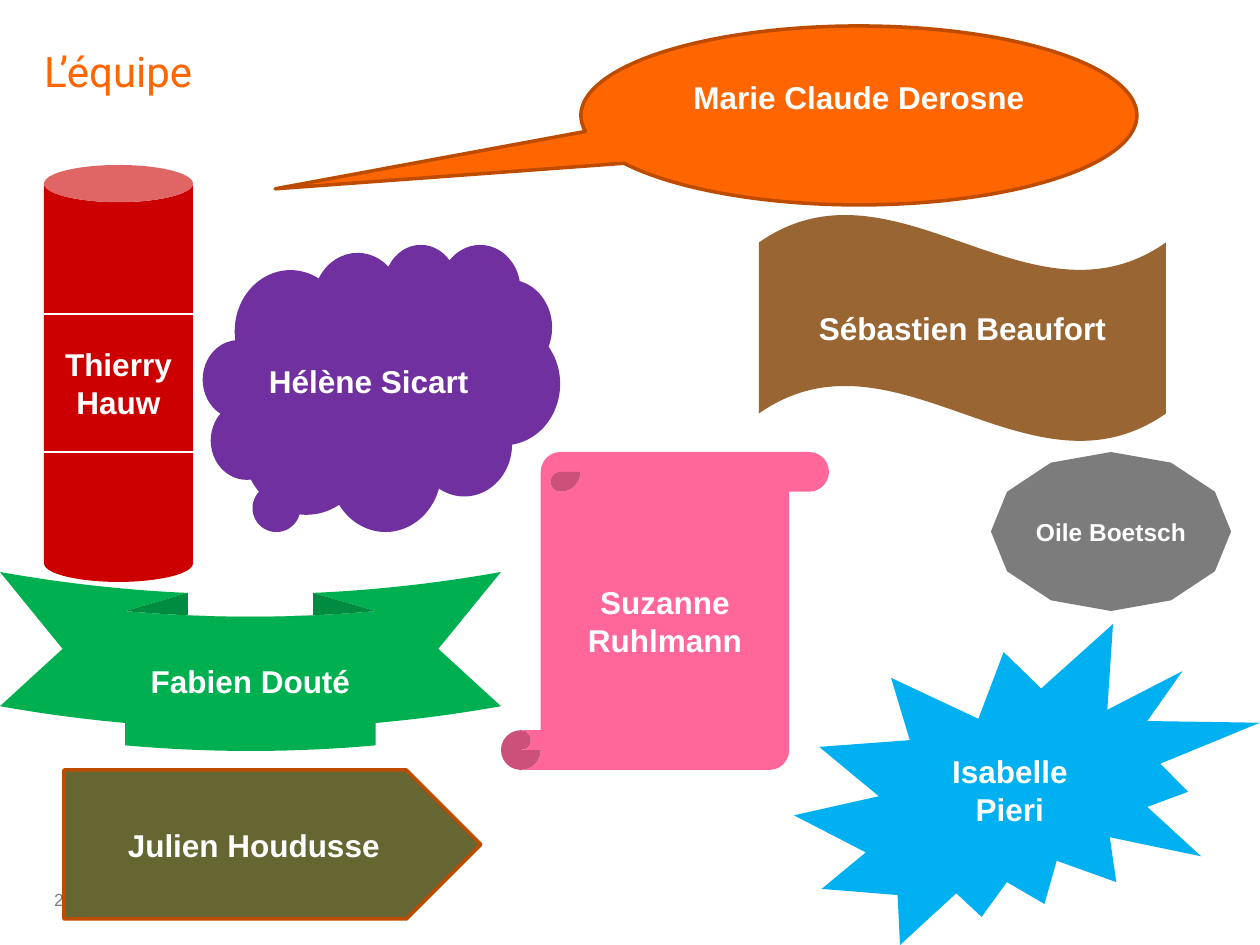
import pptx
import pptx.util
import pptx.dml.color
import pptx.enum.shapes
import pptx.enum.text
import pptx.oxml.ns
import lxml.etree

SCALE = 914400 / 126
COLORS = {
    "white": "FFFFFF", "orange": "FF6600", "rust": "BD4B00", "number": "808080",
    "sky": "00B0F0", "green": "00B050", "purple": "7030A0", "red": "CC0000",
    "brown": "996633", "gray": "7C7C7C", "pink": "FF6699", "olive": "666633",
}
SHAPES = pptx.enum.shapes.MSO_SHAPE
ALIGN = pptx.enum.text.PP_ALIGN
ANCHOR = pptx.enum.text.MSO_ANCHOR


def px(length):
    return pptx.util.Emu(round(length * SCALE))


def color(name):
    return pptx.dml.color.RGBColor.from_string(COLORS[name])


def style_font(font, name, size, color_name, bold=False):
    font.name = name
    font.size = pptx.util.Pt(size)
    font.bold = bold
    font.color.rgb = color(color_name)


def set_insets(frame, left, top, right, bottom):
    frame.margin_left, frame.margin_top = px(left), px(top)
    frame.margin_right, frame.margin_bottom = px(right), px(bottom)


def add_title(page, box, text):
    title = page.shapes.title
    title.left, title.top, title.width, title.height = map(px, box)
    frame = title.text_frame
    frame.text = text
    frame.vertical_anchor = ANCHOR.TOP
    set_insets(frame, 0, 0, 0, 0)
    para = frame.paragraphs[0]
    para.alignment = ALIGN.LEFT
    style_font(para.font, "Roboto", 24, "orange")


def add_page_number(page, box, text):
    frame = page.shapes.add_textbox(*map(px, box)).text_frame
    frame.text = text
    frame.word_wrap = False
    set_insets(frame, 0, 6, 0, 6)
    style_font(frame.paragraphs[0].font, "Arial", 10, "number")


def add_member(page, box, kind, fill, name, size=18, outlined=False, adjustments=()):
    member = page.shapes.add_shape(kind, *map(px, box))
    member.shadow.inherit = False
    for index, value in enumerate(adjustments):
        member.adjustments[index] = value
    member.fill.solid()
    member.fill.fore_color.rgb = color(fill)
    if outlined:
        member.line.color.rgb = color("rust")
        member.line.width = pptx.util.Pt(2)
    else:
        member.line.fill.background()
    frame = member.text_frame
    frame.text = name
    frame.word_wrap = True
    frame.vertical_anchor = ANCHOR.MIDDLE
    for para in frame.paragraphs:
        para.alignment = ALIGN.CENTER
        style_font(para.font, "Arial", size, "white", True)
    return member


def add_band(page, left, right, y):
    band = page.shapes.add_connector(
        pptx.enum.shapes.MSO_CONNECTOR.STRAIGHT, px(left), px(y), px(right), px(y))
    band.line.color.rgb = color("white")
    band.line.width = pptx.util.Pt(0.75)
    properties = band._element.spPr
    lxml.etree.SubElement(properties, pptx.oxml.ns.qn("a:effectLst"))


def add_banded_can(page, box, name):
    left, top, width, height = box
    add_member(page, box, SHAPES.CAN, "red", name)
    add_band(page, left - 19, left + width + 10, top + 287)
    add_band(page, left - 19, left + width + 20, top + 149)


def build_team(page):
    add_page_number(page, (54, 883, 69, 25), "2")
    add_title(page, (44, 45, 1076, 135), "L’équipe")
    callout = add_member(page, (581, 26, 556, 179), SHAPES.OVAL_CALLOUT, "orange",
                         "Marie Claude Derosne", outlined=True, adjustments=(-1.05, 0.41))
    callout.text_frame.margin_bottom = px(43)
    add_member(page, (794, 624, 466, 321), SHAPES.EXPLOSION2, "sky", "Isabelle Pieri")
    add_member(page, (0, 572, 501, 179), SHAPES.CURVED_DOWN_RIBBON, "green", "Fabien Douté")
    add_member(page, (203, 244, 357, 287), SHAPES.CLOUD_CALLOUT, "purple",
               "Hélène Sicart", adjustments=(-0.28, 0.4))
    add_banded_can(page, (44, 165, 149, 417), "Thierry\nHauw")
    add_member(page, (759, 214, 407, 228), SHAPES.WAVE, "brown", "Sébastien Beaufort")
    add_member(page, (1007, 452, 208, 159), SHAPES.STAR_6_POINT, "gray",
               "Oile Boetsch", size=14, adjustments=(0.5,))
    add_member(page, (501, 452, 328, 318), SHAPES.VERTICAL_SCROLL, "pink", "Suzanne\nRuhlmann")
    add_member(page, (64, 770, 417, 149), SHAPES.PENTAGON, "olive",
               "Julien Houdusse", outlined=True)


def main():
    deck = pptx.Presentation()
    deck.slide_width, deck.slide_height = px(1260), px(945)
    build_team(deck.slides.add_slide(deck.slide_layouts[5]))
    deck.save("out.pptx")


if __name__ == "__main__":
    main()
